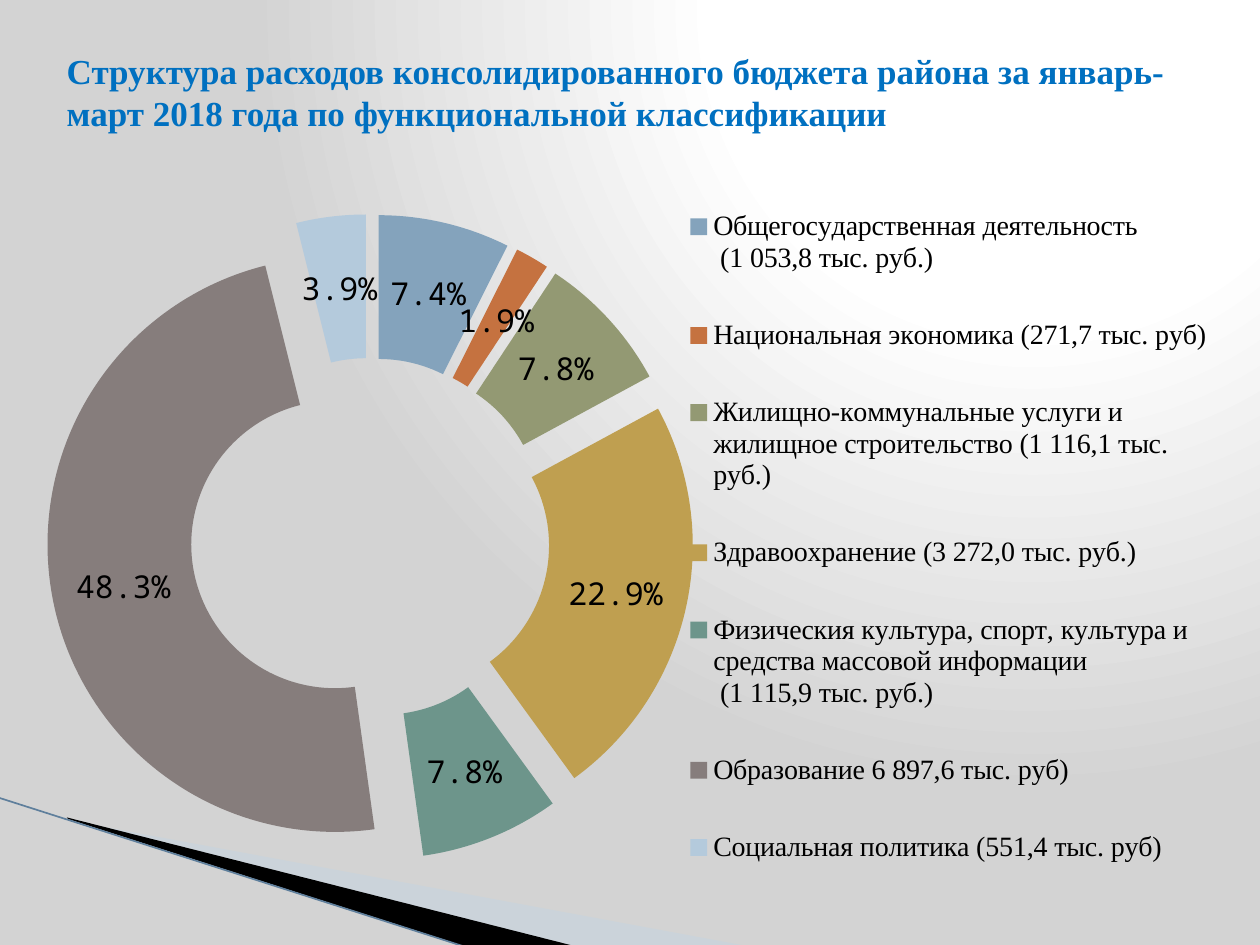
"""Build the slide on the structure of district budget spending, January-March 2018."""
from pptx import Presentation
from pptx.chart.data import CategoryChartData
from pptx.dml.color import RGBColor
from pptx.enum.chart import XL_CHART_TYPE, XL_LEGEND_POSITION
from pptx.enum.shapes import MSO_CONNECTOR
from pptx.enum.text import MSO_ANCHOR, MSO_AUTO_SIZE, PP_ALIGN
from pptx.oxml import parse_xml
from pptx.oxml.ns import nsdecls, qn
from pptx.oxml.xmlchemy import OxmlElement
from pptx.util import Cm, Pt

DOUGHNUT = XL_CHART_TYPE.DOUGHNUT
LEGEND_RIGHT = XL_LEGEND_POSITION.RIGHT
STRAIGHT = MSO_CONNECTOR.STRAIGHT
MIDDLE = MSO_ANCHOR.MIDDLE
NO_FIT = MSO_AUTO_SIZE.NONE
LEFT = PP_ALIGN.LEFT

THEME = {
    "heading": "0070C0",
    "text": "000000",
    "backdrop": [(0, "FFFFFF"), (40, "FFFFFF"), (100, "D3D3D3")],
    "pale_wedge": "C0D3E6",
    "dark_wedge": "000000",
    "edge": "5F7F9C",
    "serif": "Times New Roman",
    "mono": "Noto Sans Mono",
    "heading_size": Pt(20),
    "share_size": Pt(18),
    "legend_size": Pt(16),
    "edge_width": Pt(0.95),
}

CHART_WIDTH, CHART_HEIGHT = Cm(24), Cm(15.01)

SPENDING = [
    ("Общегосударственная деятельность\n (1 053,8 тыс. руб.)", 0.074, "84A3BC"),
    ("Национальная экономика (271,7 тыс. руб)", 0.019, "C57240"),
    ("Жилищно-коммунальные услуги и жилищное строительство (1 116,1 тыс. руб.)", 0.078, "939973"),
    ("Здравоохранение (3 272,0 тыс. руб.)", 0.229, "BF9F50"),
    ("Физическия культура, спорт, культура и средства массовой информации\n (1 115,9 тыс. руб.)", 0.078, "6D958B"),
    ("Образование 6 897,6 тыс. руб)", 0.483, "867D7C"),
    ("Социальная политика (551,4 тыс. руб)", 0.039, "B4CADC"),
]

WEDGES = [
    ([(1.4, 16.54), (15.11, 19.08), (11.58, 19.08), (1.4, 16.51)], THEME["pale_wedge"], 40),
    ([(1.35, 16.48), (11.61, 19.08), (9.45, 19.1), (1.37, 16.51)], THEME["dark_wedge"], 100),
]


def style_font(font, name, size, color):
    font.name = name
    font.size = size
    font.color.rgb = RGBColor.from_string(color)


def manual_layout(target, left, top, width, height):
    layout = OxmlElement("c:layout")
    manual = OxmlElement("c:manualLayout")
    layout.append(manual)
    settings = [("layoutTarget", target)] if target else []
    settings += [("xMode", "edge"), ("yMode", "edge")]
    settings += [("x", left / CHART_WIDTH), ("y", top / CHART_HEIGHT)]
    settings += [("w", width / CHART_WIDTH), ("h", height / CHART_HEIGHT)]
    for tag, value in settings:
        setting = OxmlElement(f"c:{tag}")
        setting.set("val", str(value))
        manual.append(setting)
    return layout


prs = Presentation()
prs.slide_width, prs.slide_height = Cm(25.4), Cm(19.05)
slide = prs.slides.add_slide(prs.slide_layouts[5])

slide.background.fill.gradient()
plain_gradient = slide.element.find(".//" + qn("a:gradFill"))
stops = "".join(
    f'<a:gs pos="{position * 1000}"><a:srgbClr val="{color}"/></a:gs>'
    for position, color in THEME["backdrop"]
)
radial_gradient = parse_xml(
    f'<a:gradFill {nsdecls("a")} rotWithShape="1"><a:gsLst>{stops}</a:gsLst>'
    '<a:path path="circle"><a:fillToRect l="65000" t="0" r="0" b="98000"/></a:path></a:gradFill>'
)
plain_gradient.getparent().replace(plain_gradient, radial_gradient)

for corners, color, opacity in WEDGES:
    points = [(Cm(x), Cm(y)) for x, y in corners]
    outline = slide.shapes.build_freeform(*points[0])
    outline.add_line_segments(points[1:], close=True)
    wedge = outline.convert_to_shape()
    wedge.shadow.inherit = False
    wedge.fill.solid()
    wedge.fill.fore_color.rgb = RGBColor.from_string(color)
    wedge.line.fill.background()
    if opacity < 100:
        alpha = OxmlElement("a:alpha")
        alpha.set("val", str(opacity * 1000))
        wedge.element.spPr.find(".//" + qn("a:srgbClr")).append(alpha)

edge = slide.shapes.add_connector(STRAIGHT, Cm(-0.03), Cm(16.08), Cm(9.42), Cm(19.1))
edge.line.color.rgb = RGBColor.from_string(THEME["edge"])
edge.line.width = THEME["edge_width"]
edge.element.spPr.append(OxmlElement("a:effectLst"))

budget = CategoryChartData(number_format="0.0%")
budget.categories = [label for label, share, color in SPENDING]
budget.add_series("Series 1", [share for label, share, color in SPENDING])
chart = slide.shapes.add_chart(
    DOUGHNUT, Cm(0.89), Cm(3.33), CHART_WIDTH, CHART_HEIGHT, budget
).chart
chart.has_title = False
style_font(chart.font, THEME["mono"], THEME["share_size"], THEME["text"])

ring = chart.plots[0]
ring.vary_by_categories = True
spending = ring.series[0]
explosion = OxmlElement("c:explosion")
explosion.set("val", "25")
spending._element.find(qn("c:tx")).addnext(explosion)
for index, (label, share, color) in enumerate(SPENDING):
    slice_format = spending.points[index].format
    slice_format.fill.solid()
    slice_format.fill.fore_color.rgb = RGBColor.from_string(color)
    slice_format.line.fill.background()

shares = spending.data_labels
shares.show_value = True
shares.show_percentage = False
shares.number_format = "0.0%"
shares.number_format_is_linked = False
style_font(shares.font, THEME["mono"], THEME["share_size"], THEME["text"])

plot_area = ring._element.getparent()
for automatic in plot_area.findall(qn("c:layout")):
    plot_area.remove(automatic)
plot_area.insert(0, manual_layout("inner", Cm(0), Cm(0.99), Cm(13.15), Cm(13.04)))

chart.has_legend = True
legend = chart.legend
legend.position = LEGEND_RIGHT
legend.include_in_layout = False
style_font(legend.font, THEME["serif"], THEME["legend_size"], THEME["text"])
for automatic in legend._element.findall(qn("c:layout")):
    legend._element.remove(automatic)
legend._element.find(qn("c:legendPos")).addnext(
    manual_layout(None, Cm(12.83), Cm(0), Cm(10.8), Cm(15))
)

heading = slide.shapes.title
heading.left, heading.top, heading.width, heading.height = Cm(1.09), Cm(0.76), Cm(23.6), Cm(2.16)
heading.text_frame.text = (
    "Структура расходов консолидированного бюджета района за январь-март 2018 года "
    "по функциональной классификации"
)
heading.text_frame.word_wrap = True
heading.text_frame.auto_size = NO_FIT
heading.text_frame.vertical_anchor = MIDDLE
heading_line = heading.text_frame.paragraphs[0]
heading_line.alignment = LEFT
for run in heading_line.runs:
    style_font(run.font, THEME["serif"], THEME["heading_size"], THEME["heading"])
    run.font.bold = True
slide.shapes.element.append(heading.element)

prs.save("out.pptx")
